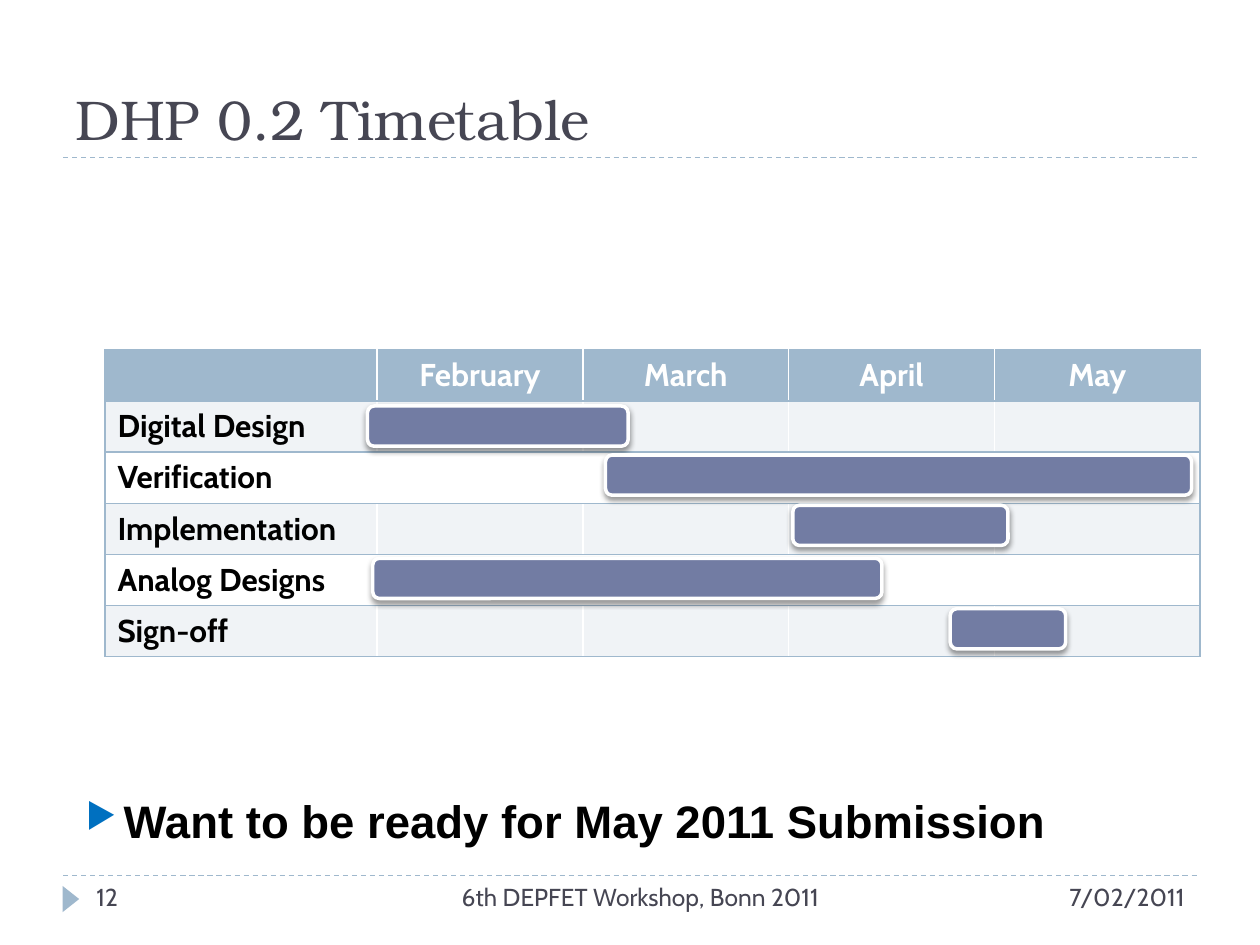
from dataclasses import dataclass

from lxml import etree
from pptx import Presentation
from pptx.dml.color import RGBColor
from pptx.enum.dml import MSO_LINE
from pptx.enum.shapes import MSO_CONNECTOR, MSO_SHAPE
from pptx.enum.text import MSO_ANCHOR, PP_ALIGN
from pptx.oxml import parse_xml
from pptx.oxml.ns import nsdecls, qn
from pptx.util import Pt

LEFT, MID, RIGHT = PP_ALIGN.LEFT, PP_ALIGN.CENTER, PP_ALIGN.RIGHT
TOP, BOTTOM = MSO_ANCHOR.TOP, MSO_ANCHOR.BOTTOM
RECT, ROUND = MSO_SHAPE.RECTANGLE, MSO_SHAPE.ROUNDED_RECTANGLE
TRIANGLE = MSO_SHAPE.ISOSCELES_TRIANGLE
STRAIGHT, DASH = MSO_CONNECTOR.STRAIGHT, MSO_LINE.DASH

SERIF, SANS, ARIAL = "TeX Gyre Bonum", "Cabin", "Arial"
BLUE, SLATE, VIOLET = "9FB8CD", "464653", "727CA3"
PALE, WHITE, BLACK = "F0F3F6", "FFFFFF", "000000"

MONTHS = ["", "February", "March", "April", "May"]
TABLE_X, TABLE_Y, ROW_H = 60, 200, 29.2
NAME_W, MONTH_W = 155.5, 117.6
BAR_H = 23


@dataclass
class Label:
    text: str
    x: float
    y: float
    w: float
    h: float
    size: float = 14
    face: str = SANS
    align: PP_ALIGN = LEFT
    anchor: MSO_ANCHOR = TOP


@dataclass
class Task:
    name: str
    x: float
    y: float
    w: float


LABELS = [
    Label("DHP 0.2 Timetable", 36, 12, 648, 78, 32, SERIF, LEFT, BOTTOM),
    Label("12", 48, 500.4, 156, 28.8),
    Label("6th DEPFET Workshop, Bonn 2011", 228, 500.4, 276, 28.8, align=MID),
    Label("7/02/2011", 504, 500.4, 180, 28.8, align=RIGHT),
]

TASKS = [
    Task("Digital Design", 210, 232, 149),
    Task("Verification", 346, 260, 335),
    Task("Implementation", 453, 288.7, 123),
    Task("Analog Designs", 213, 319, 291),
    Task("Sign-off", 543, 347.8, 66),
]


def color(code: str) -> RGBColor:
    return RGBColor.from_string(code)


def write(para, text: str, size: float, face: str, code: str, bold=False) -> None:
    run = para.add_run()
    run.text = text
    run.font.size = Pt(size)
    run.font.name = face
    run.font.bold = bold
    run.font.color.rgb = color(code)


def draw_label(slide, item: Label) -> None:
    box = slide.shapes.add_textbox(Pt(item.x), Pt(item.y), Pt(item.w), Pt(item.h))
    frame = box.text_frame
    frame.word_wrap = True
    frame.vertical_anchor = item.anchor
    para = frame.paragraphs[0]
    para.alignment = item.align
    write(para, item.text, item.size, item.face, SLATE)


def draw_rule(slide, y: float) -> None:
    rule = slide.shapes.add_connector(STRAIGHT, Pt(36), Pt(y), Pt(684), Pt(y))
    rule.line.color.rgb = color(BLUE)
    rule.line.width = Pt(0.75)
    rule.line.dash_style = DASH
    etree.SubElement(rule._element.spPr, qn("a:effectLst"))


def draw_shape(slide, kind, x: float, y: float, w: float, h: float, code: str):
    shape = slide.shapes.add_shape(kind, Pt(x), Pt(y), Pt(w), Pt(h))
    shape.shadow.inherit = False
    shape.fill.solid()
    shape.fill.fore_color.rgb = color(code)
    shape.line.fill.background()
    return shape


def draw_bar(slide, task: Task) -> None:
    bar = draw_shape(slide, ROUND, task.x, task.y, task.w, BAR_H, VIOLET)
    bar.line.color.rgb = color(WHITE)
    bar.line.width = Pt(2)
    glow = bar._element.spPr.find(qn("a:effectLst"))
    glow.append(parse_xml(
        f'<a:outerShdw {nsdecls("a")} blurRad="{Pt(3)}" dist="{Pt(2)}" dir="5400000"'
        f' rotWithShape="0"><a:srgbClr val="{BLACK}"><a:alpha val="40000"/>'
        "</a:srgbClr></a:outerShdw>"))


def edge_cell(cell, sides: list[str]) -> None:
    props = cell._tc.get_or_add_tcPr()
    for spot, side in enumerate(sides):
        props.insert(spot, parse_xml(
            f'<a:{side} {nsdecls("a")} w="{Pt(1)}"><a:solidFill>'
            f'<a:srgbClr val="{BLUE}"/></a:solidFill></a:{side}>'))


def draw_table(slide) -> None:
    rows, cols = len(TASKS) + 1, len(MONTHS)
    width = NAME_W + MONTH_W * (cols - 1)
    grid = slide.shapes.add_table(
        rows, cols, Pt(TABLE_X), Pt(TABLE_Y), Pt(width), Pt(ROW_H * rows)).table
    for c, col in enumerate(grid.columns):
        col.width = Pt(MONTH_W if c else NAME_W)
    for r, row in enumerate(grid.rows):
        row.height = Pt(ROW_H)
        words = [TASKS[r - 1].name] + [""] * (cols - 1) if r else MONTHS
        back = (PALE if r % 2 else WHITE) if r else BLUE
        for c, text in enumerate(words):
            cell = grid.cell(r, c)
            cell.fill.solid()
            cell.fill.fore_color.rgb = color(back)
            ends = {0: ["lnL"], cols - 1: ["lnR"]}.get(c, [])
            edge_cell(cell, ends + ["lnT", "lnB"])
            para = cell.text_frame.paragraphs[0]
            para.alignment = LEFT if r else MID
            if text:
                write(para, text, 18, SANS, BLACK if r else WHITE, True)
            else:
                para.font.size = Pt(18)


def draw_note(slide) -> None:
    box = draw_shape(slide, RECT, 42, 447, 639, 46, WHITE)
    frame = box.text_frame
    frame.word_wrap = True
    frame.vertical_anchor = TOP
    frame.margin_top = Pt(6)
    para = frame.paragraphs[0]
    para.alignment = LEFT
    props = para._p.get_or_add_pPr()
    props.set("marL", str(Pt(21.6)))
    props.set("indent", str(Pt(-21.6)))
    tint = etree.SubElement(props, qn("a:buClr"))
    etree.SubElement(tint, qn("a:srgbClr"), val="0070C0")
    etree.SubElement(props, qn("a:buSzPct"), val="76000")
    etree.SubElement(props, qn("a:buChar"), char="▶")
    write(para, "Want to be ready for May 2011 Submission", 26, ARIAL, BLACK, True)


def main() -> None:
    deck = Presentation()
    deck.slide_width, deck.slide_height = Pt(720), Pt(540)
    slide = deck.slides.add_slide(deck.slide_layouts[6])

    # Frame: rules, page marker, title and footer
    for y in (90, 500.4):
        draw_rule(slide, y)
    mark = draw_shape(slide, TRIANGLE, 33, 509, 15, 9.5, BLUE)
    mark.rotation = 90
    for item in LABELS:
        draw_label(slide, item)

    # Timetable with one bar per task
    draw_table(slide)
    for task in TASKS:
        draw_bar(slide, task)

    # Closing note
    draw_note(slide)
    deck.save("out.pptx")


if __name__ == "__main__":
    main()
